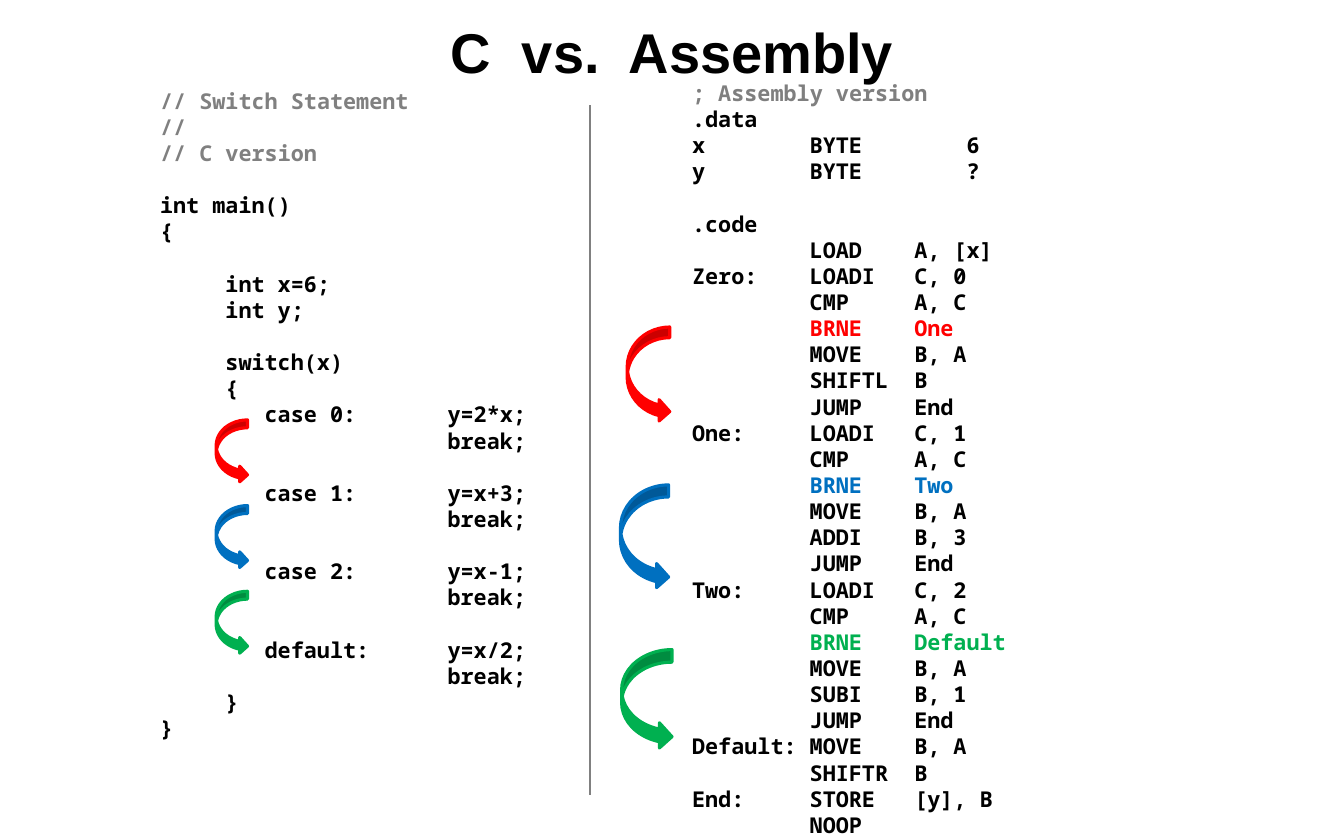
from typing import NamedTuple

from pptx import Presentation, util as u
from pptx.dml.color import RGBColor
from pptx.enum import shapes, text
from pptx.oxml import parse_xml
from pptx.oxml.ns import nsdecls, qn

BLACK = RGBColor(0, 0, 0)
GREY = RGBColor(0x80, 0x80, 0x80)
NOTE = RGBColor(0x7F, 0x7F, 0x7F)
RED = RGBColor(0xFF, 0, 0)
BLUE = RGBColor(0, 0x70, 0xC0)
GREEN = RGBColor(0, 0xB0, 0x50)

LEAD = u.Pt(16.82)  # height of one code line
CHAR = 8.4  # points across one code character


class Box(NamedTuple):
    left: float
    top: float
    width: float
    height: float


class Code(NamedTuple):
    box: Box
    stops: tuple  # tab stops, in characters
    tints: dict  # colour by the start of a line
    blocks: tuple  # blocks of lines with a gap between


class Jump(NamedTuple):
    box: Box
    tint: RGBColor


C_CODE = Code(
    Box(1.16, 0.68, 4.14, 6.99), (5, 8, 22), {"//": GREY},
    ("// Switch Statement\n//\n// C version",
     "int main()\n{",
     "\tint x=6;\n\tint y;",
     "\tswitch(x)\n\t{\n\t\tcase 0:\ty=2*x;\n\t\t\tbreak;",
     "\t\tcase 1:\ty=x+3;\n\t\t\tbreak;",
     "\t\tcase 2:\ty=x-1;\n\t\t\tbreak;",
     "\t\tdefault:\ty=x/2;\n\t\t\tbreak;\n\t}\n}"))

ASM_CODE = Code(
    Box(5.91, 0.61, 4.64, 6.88), (9, 17, 21),
    {";": NOTE, "\tBRNE\tOne": RED, "\tBRNE\tTwo": BLUE,
     "\tBRNE\tDefault": GREEN},
    ("; Assembly version\n.data\nx\tBYTE\t\t6\ny\tBYTE\t\t?",
     ".code\n\tLOAD\tA, [x]\n"
     "Zero:\tLOADI\tC, 0\n\tCMP\tA, C\n\tBRNE\tOne\n"
     "\tMOVE\tB, A\n\tSHIFTL\tB\n\tJUMP\tEnd\n"
     "One:\tLOADI\tC, 1\n\tCMP\tA, C\n\tBRNE\tTwo\n"
     "\tMOVE\tB, A\n\tADDI\tB, 3\n\tJUMP\tEnd\n"
     "Two:\tLOADI\tC, 2\n\tCMP\tA, C\n\tBRNE\tDefault\n"
     "\tMOVE\tB, A\n\tSUBI\tB, 1\n\tJUMP\tEnd\n"
     "Default:\tMOVE\tB, A\n\tSHIFTR\tB\n"
     "End:\tSTORE\t[y], B\n\tNOOP"))

JUMPS = [Jump(Box(1.93, 3.75 + 0.765 * i, 0.28, 0.56), tint)
         for i, tint in enumerate((RED, BLUE, GREEN))]
JUMPS += [Jump(Box(5.6, 2.92, 0.38, 0.85), RED),
          Jump(Box(5.54, 4.33, 0.43, 0.93), BLUE),
          Jump(Box(5.55, 5.8, 0.45, 0.89), GREEN)]


def put(item, **values) -> None:
    for name, value in values.items():
        setattr(item, name, value)


def add_frame(slide, box: Box, **values):
    frame = slide.shapes.add_textbox(*map(u.Inches, box)).text_frame
    put(frame, word_wrap=True, vertical_anchor=text.MSO_ANCHOR.TOP, **values)
    return frame


def add_run(para, words: str, font: str, size: float, tint: RGBColor) -> None:
    run = para.add_run()
    run.text = words
    put(run.font, name=font, size=u.Pt(size), bold=True)
    run.font.color.rgb = tint


def set_tabs(para, stops: tuple) -> None:
    tabs = "".join(f'<a:tab pos="{u.Pt(CHAR * n)}" algn="l"/>' for n in stops)
    para._p.get_or_add_pPr().append(
        parse_xml(f'<a:tabLst {nsdecls("a")}>{tabs}</a:tabLst>'))


def add_title(slide, words: str) -> None:
    frame = add_frame(slide, Box(1, 0.01, 10, 0.75),
                      margin_top=u.Inches(0.15), margin_bottom=0)
    para = frame.paragraphs[0]
    para.alignment = text.PP_ALIGN.CENTER
    add_run(para, words, "Arial", 36, BLACK)


def add_code(slide, code: Code) -> None:
    frame = add_frame(slide, code.box, margin_left=u.Inches(0.27),
                      margin_top=u.Inches(0.1))
    para = frame.paragraphs[0]
    for i, block in enumerate(code.blocks):
        for j, line in enumerate(block.split("\n")):
            if i or j:
                para = frame.add_paragraph()
            gap = LEAD if i and not j else u.Pt(0)
            put(para, line_spacing=LEAD, space_before=gap)
            set_tabs(para, code.stops)
            tint = next((c for start, c in code.tints.items()
                         if line.startswith(start)), BLACK)
            add_run(para, line, "Noto Sans Mono", 14, tint)


def add_rule(slide, x: float, top: float, end: float) -> None:
    rule = slide.shapes.add_connector(
        shapes.MSO_CONNECTOR.STRAIGHT, *map(u.Inches, (x, top, x, end)))
    rule.line.color.rgb = GREY
    rule.line.width = u.Pt(1.5)
    props = rule._element.spPr
    props.append(props.makeelement(qn("a:effectLst"), {}))


def add_jump(slide, jump: Jump) -> None:
    arrow = slide.shapes.add_shape(
        shapes.MSO_SHAPE.CURVED_RIGHT_ARROW, *map(u.Inches, jump.box))
    arrow.shadow.inherit = False
    arrow.fill.solid()
    arrow.fill.fore_color.rgb = jump.tint
    arrow.line.color.rgb = jump.tint
    arrow.line.width = u.Pt(2)


def main() -> None:
    deck = Presentation()
    put(deck, slide_width=u.Inches(12), slide_height=u.Inches(7.5))
    slide = deck.slides.add_slide(deck.slide_layouts[6])
    add_title(slide, "C  vs.  Assembly")
    for code in (C_CODE, ASM_CODE):
        add_code(slide, code)
    add_rule(slide, 5.27, 0.94, 7.1)
    for jump in JUMPS:
        add_jump(slide, jump)
    deck.save("out.pptx")


if __name__ == "__main__":
    main()
